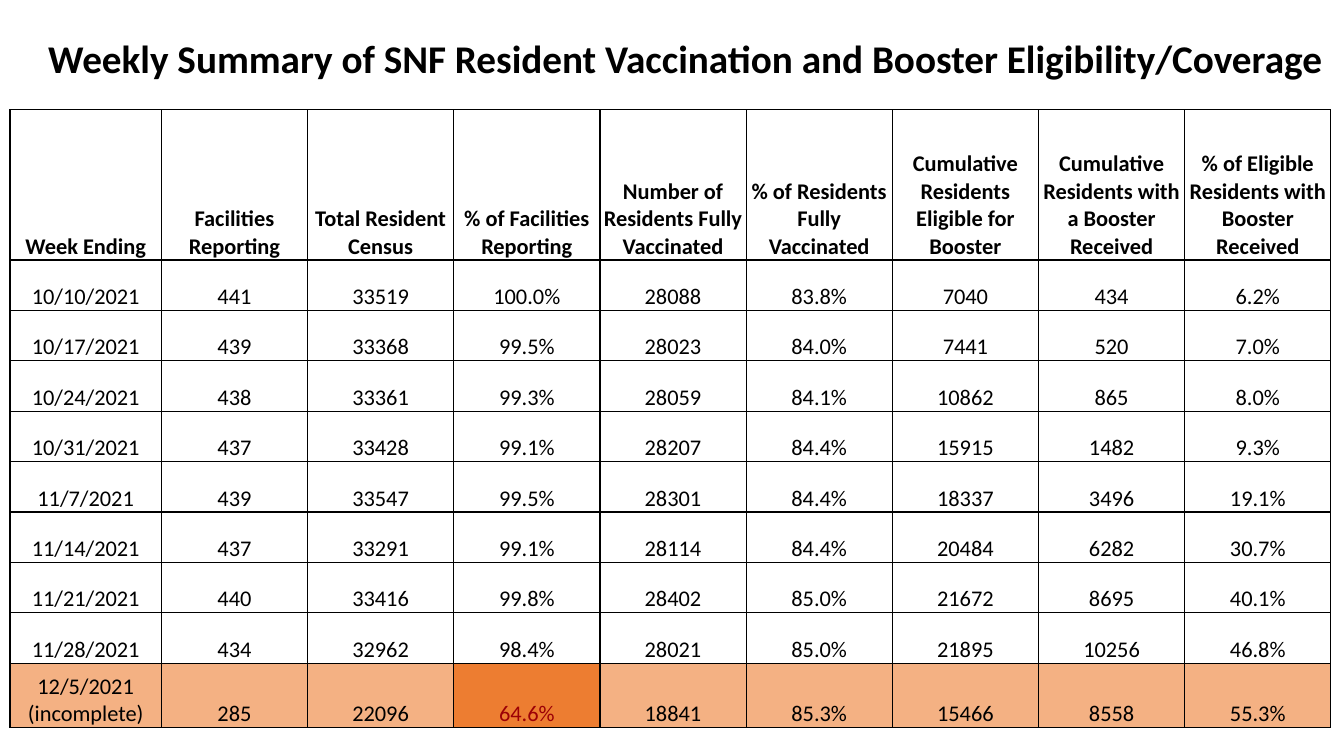
from dataclasses import dataclass
from typing import Optional

from lxml.etree import SubElement
from pptx import Presentation
from pptx.dml.color import RGBColor
from pptx.enum.text import MSO_ANCHOR as Anchor, MSO_AUTO_SIZE as AutoSize, PP_ALIGN as Align
from pptx.oxml.ns import qn
from pptx.util import Inches, Pt

COLORS = {
    "text": "000000",
    "border": "000000",
    "incomplete": "F4B183",
    "low_fill": "ED7D31",
    "low_text": "9C0006",
}
FONT = "Calibri"
TITLE = "Weekly Summary of SNF Resident Vaccination and Booster Eligibility/Coverage"
HEADERS = (
    "Week Ending",
    "Facilities Reporting",
    "Total Resident Census",
    "% of Facilities Reporting",
    "Number of Residents Fully Vaccinated",
    "% of Residents Fully Vaccinated",
    "Cumulative Residents Eligible for Booster",
    "Cumulative Residents with a Booster Received",
    "% of Eligible Residents with Booster Received",
)
REPORTING_COLUMN = HEADERS.index("% of Facilities Reporting")


@dataclass(frozen=True)
class Week:
    ending: str
    facilities: int
    census: int
    reporting: float
    vaccinated: int
    vaccinated_share: float
    eligible: int
    boosted: int
    boosted_share: float
    complete: bool = True

    def texts(self) -> tuple[str, ...]:
        return (
            self.ending,
            str(self.facilities),
            str(self.census),
            f"{self.reporting:.1f}%",
            str(self.vaccinated),
            f"{self.vaccinated_share:.1f}%",
            str(self.eligible),
            str(self.boosted),
            f"{self.boosted_share:.1f}%",
        )


@dataclass(frozen=True)
class CellStyle:
    bold: bool = False
    color: str = COLORS["text"]
    fill: Optional[str] = None


WEEKS = (
    Week("10/10/2021", 441, 33519, 100.0, 28088, 83.8, 7040, 434, 6.2),
    Week("10/17/2021", 439, 33368, 99.5, 28023, 84.0, 7441, 520, 7.0),
    Week("10/24/2021", 438, 33361, 99.3, 28059, 84.1, 10862, 865, 8.0),
    Week("10/31/2021", 437, 33428, 99.1, 28207, 84.4, 15915, 1482, 9.3),
    Week("11/7/2021", 439, 33547, 99.5, 28301, 84.4, 18337, 3496, 19.1),
    Week("11/14/2021", 437, 33291, 99.1, 28114, 84.4, 20484, 6282, 30.7),
    Week("11/21/2021", 440, 33416, 99.8, 28402, 85.0, 21672, 8695, 40.1),
    Week("11/28/2021", 434, 32962, 98.4, 28021, 85.0, 21895, 10256, 46.8),
    Week("12/5/2021 (incomplete)", 285, 22096, 64.6, 18841, 85.3, 15466, 8558, 55.3, False),
)
HEADER_STYLE = CellStyle(bold=True)
BODY_STYLE = CellStyle()
INCOMPLETE_STYLE = CellStyle(fill=COLORS["incomplete"])
LOW_STYLE = CellStyle(color=COLORS["low_text"], fill=COLORS["low_fill"])


def set_font(paragraph, size: float, bold: bool, color: str) -> None:
    font = paragraph.font
    font.name, font.size, font.bold = FONT, Pt(size), bold
    font.color.rgb = RGBColor.from_string(color)


def add_borders(cell) -> None:
    properties = cell._tc.get_or_add_tcPr()
    for position, side in enumerate(("a:lnL", "a:lnR", "a:lnT", "a:lnB")):
        line = SubElement(properties, qn(side), w=str(Pt(1)))
        fill = SubElement(line, qn("a:solidFill"))
        SubElement(fill, qn("a:srgbClr"), val=COLORS["border"])
        properties.insert(position, line)


def fill_cell(cell, text: str, style: CellStyle) -> None:
    cell.text = text
    cell.vertical_anchor = Anchor.BOTTOM
    cell.margin_left = cell.margin_right = cell.margin_top = Inches(0.01)
    cell.margin_bottom = 0
    paragraph = cell.text_frame.paragraphs[0]
    paragraph.alignment = Align.CENTER
    set_font(paragraph, 16, style.bold, style.color)
    if style.fill:
        cell.fill.solid()
        cell.fill.fore_color.rgb = RGBColor.from_string(style.fill)
    else:
        cell.fill.background()
    add_borders(cell)


def week_style(week: Week, column: int) -> CellStyle:
    if week.complete:
        return BODY_STYLE
    return LOW_STYLE if column == REPORTING_COLUMN else INCOMPLETE_STYLE


def add_summary_table(slide) -> None:
    widths = [1.5] + [1.45] * (len(HEADERS) - 1)
    heights = [1.49] + [0.5 if week.complete else 0.64 for week in WEEKS]
    table = slide.shapes.add_table(
        len(heights), len(widths), Inches(0.1), Inches(1.09),
        Inches(sum(widths)), Inches(sum(heights)),
    ).table
    table.first_row = table.horz_banding = False
    for column, width in zip(table.columns, widths):
        column.width = Inches(width)
    for row, height in zip(table.rows, heights):
        row.height = Inches(height)
    for column, header in enumerate(HEADERS):
        fill_cell(table.cell(0, column), header, HEADER_STYLE)
    for row, week in enumerate(WEEKS, start=1):
        for column, text in enumerate(week.texts()):
            fill_cell(table.cell(row, column), text, week_style(week, column))


def add_title(slide) -> None:
    shape = slide.shapes.add_textbox(Inches(0.38), Inches(0.29), Inches(12.87), Inches(0.57))
    frame = shape.text_frame
    frame.word_wrap = False
    frame.auto_size = AutoSize.SHAPE_TO_FIT_TEXT
    paragraph = frame.paragraphs[0]
    paragraph.text = TITLE
    set_font(paragraph, 28, True, COLORS["text"])


def main() -> None:
    presentation = Presentation()
    presentation.slide_width = Inches(13.33)
    presentation.slide_height = Inches(7.5)
    slide = presentation.slides.add_slide(presentation.slide_layouts[6])
    add_summary_table(slide)
    add_title(slide)
    presentation.save("out.pptx")


if __name__ == "__main__":
    main()
